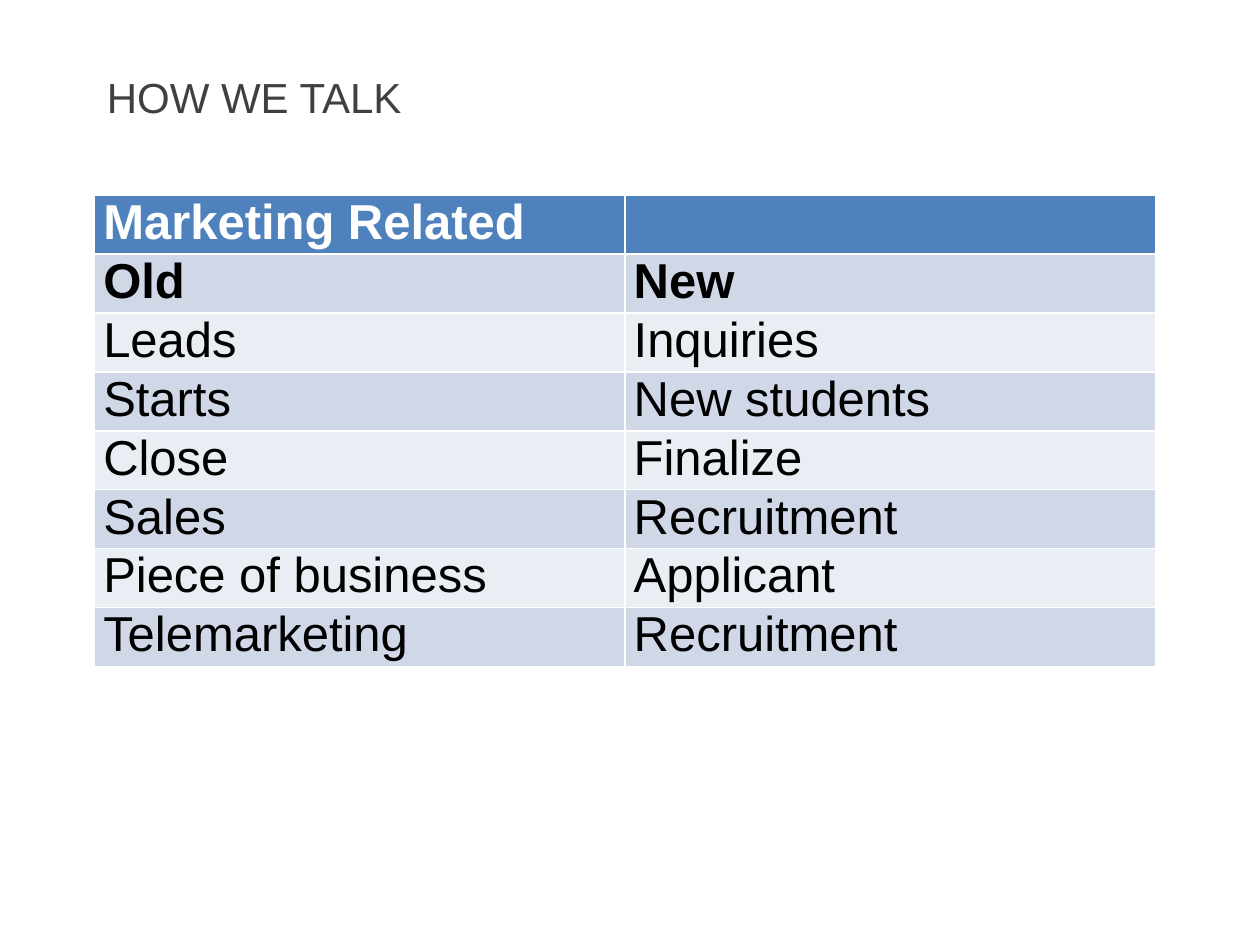
from pptx import Presentation
from pptx.dml.color import RGBColor
from pptx.enum.text import MSO_ANCHOR
from pptx.util import Inches, Pt

COLORS = {
    "title": "404040",
    "header": "4F81BD",
    "header_text": "FFFFFF",
    "body_text": "000000",
    "band_dark": "D0D8E8",
    "band_light": "E9EDF4",
}
TERMS = [
    ("Marketing Related", ""),
    ("Old", "New"),
    ("Leads", "Inquiries"),
    ("Starts", "New students"),
    ("Close", "Finalize"),
    ("Sales", "Recruitment"),
    ("Piece of business", "Applicant"),
    ("Telemarketing", "Recruitment"),
]


def style_text(para, size, color, bold=False):
    for span in para.runs:
        span.font.name = "Arial"
        span.font.size = Pt(size)
        span.font.bold = bold
        span.font.color.rgb = RGBColor.from_string(COLORS[color])


deck = Presentation()
deck.slide_width, deck.slide_height = Inches(10), Inches(7.5)
page = deck.slides.add_slide(deck.slide_layouts[6])

# Title
title_box = page.shapes.add_textbox(Inches(0.75), Inches(0.33), Inches(7.17), Inches(0.87))
title_box.text_frame.word_wrap = True
title_box.text_frame.vertical_anchor = MSO_ANCHOR.MIDDLE
title_box.text_frame.text = "HOW WE TALK"
style_text(title_box.text_frame.paragraphs[0], 24, "title")

# Table of old and new terms; the default table style draws the white borders
table = page.shapes.add_table(
    len(TERMS), 2, Inches(0.75), Inches(1.55), Inches(8.42), Inches(3.44)
).table
for row_index, terms in enumerate(TERMS):
    table.rows[row_index].height = Inches(0.43)
    if row_index == 0:
        fill = "header"
    else:
        fill = "band_dark" if row_index % 2 else "band_light"
    for column_index, term in enumerate(terms):
        cell = table.cell(row_index, column_index)
        cell.margin_left = cell.margin_right = Inches(0.07)
        cell.margin_top = cell.margin_bottom = Inches(0)
        cell.fill.solid()
        cell.fill.fore_color.rgb = RGBColor.from_string(COLORS[fill])
        cell.text_frame.text = term
        text_color = "header_text" if row_index == 0 else "body_text"
        style_text(cell.text_frame.paragraphs[0], 28, text_color, bold=row_index < 2)

deck.save("out.pptx")
